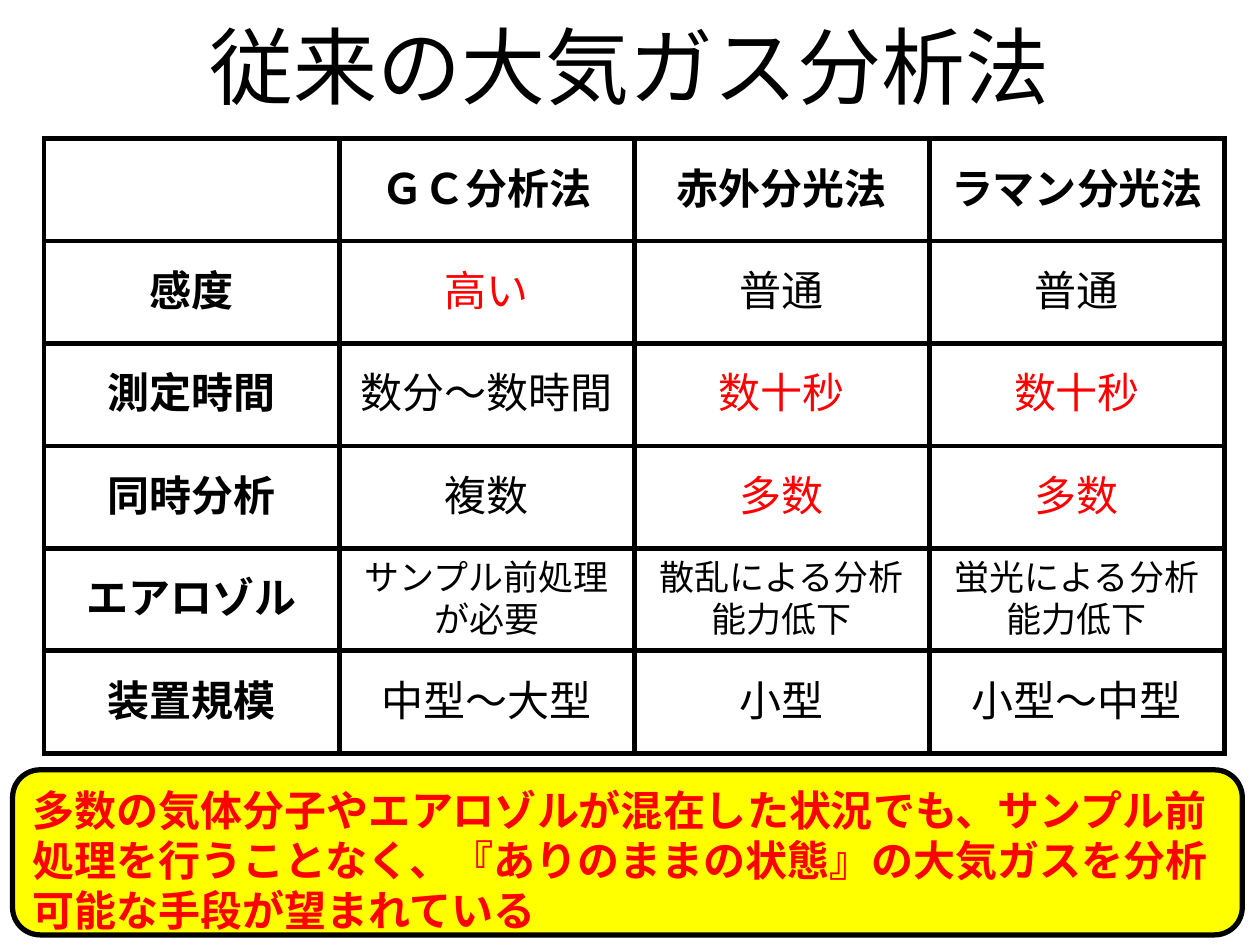
from lxml import etree
from pptx import Presentation
from pptx.dml.color import RGBColor
from pptx.enum.shapes import MSO_SHAPE
from pptx.enum.text import MSO_ANCHOR, PP_ALIGN
from pptx.oxml.ns import qn
from pptx.util import Inches, Pt

ROUND = MSO_SHAPE.ROUNDED_RECTANGLE
TOP, MIDDLE = MSO_ANCHOR.TOP, MSO_ANCHOR.MIDDLE
LEFT, CENTER = PP_ALIGN.LEFT, PP_ALIGN.CENTER
BLACK, WHITE, RED, YELLOW = "000000", "FFFFFF", "FF0000", "FFFF00"

TITLE = "従来の大気ガス分析法"
ROWS = [
    ["", "ＧＣ分析法", "赤外分光法", "ラマン分光法"],
    ["感度", "高い", "普通", "普通"],
    ["測定時間", "数分～数時間", "数十秒", "数十秒"],
    ["同時分析", "複数", "多数", "多数"],
    ["エアロゾル", "サンプル前処理が必要", "散乱による分析能力低下", "蛍光による分析能力低下"],
    ["装置規模", "中型～大型", "小型", "小型～中型"],
]
GOOD = {"高い", "数十秒", "多数"}
NOTE = (
    "多数の気体分子やエアロゾルが混在した状況でも、サンプル前処理を行うことなく、"
    "『ありのままの状態』の大気ガスを分析可能な手段が望まれている"
)


def rgb(code):
    return RGBColor.from_string(code)


def box(left, top, width, height):
    return [Inches(n) for n in (left, top, width, height)]


def write(frame, text, size=24, font="Calibri", color=BLACK, bold=False,
          align=CENTER, anchor=MIDDLE):
    frame.word_wrap = True
    frame.vertical_anchor = anchor
    par = frame.paragraphs[0]
    par.alignment = align
    run = par.add_run()
    run.text = text
    run.font.size = Pt(size)
    run.font.name = font
    run.font.bold = bold
    run.font.color.rgb = rgb(color)
    props = run.font._element
    for tag in ("a:ea", "a:cs"):
        etree.SubElement(props, qn(tag), typeface=font)


def frame_cell(cell):
    props = cell._tc.get_or_add_tcPr()
    for i, side in enumerate(("a:lnL", "a:lnR", "a:lnT", "a:lnB")):
        line = etree.Element(qn(side), w=str(Pt(3)))
        fill = etree.SubElement(line, qn("a:solidFill"))
        etree.SubElement(fill, qn("a:srgbClr"), val=BLACK)
        props.insert(i, line)


def add_grid(slide):
    grid = slide.shapes.add_table(
        len(ROWS), len(ROWS[0]), *box(0.35, 1.1, 9.37, 4.88)).table
    for r, row in enumerate(ROWS):
        for c, text in enumerate(row):
            cell = grid.cell(r, c)
            cell.fill.solid()
            cell.fill.fore_color.rgb = rgb(WHITE)
            frame_cell(cell)
            cell.vertical_anchor = MIDDLE
            if text:
                write(cell.text_frame, text,
                      size=20 if len(text) > 8 else 24,
                      color=RED if text in GOOD else BLACK,
                      bold=r == 0 or c == 0, anchor=None)


def add_note(slide):
    note = slide.shapes.add_shape(ROUND, *box(0.1, 6.11, 9.76, 1.31))
    note.shadow.inherit = False
    note.fill.solid()
    note.fill.fore_color.rgb = rgb(YELLOW)
    note.line.color.rgb = rgb(BLACK)
    note.line.width = Pt(3)
    write(note.text_frame, NOTE, font="Arial", color=RED, bold=True,
          align=LEFT, anchor=TOP)


def main():
    deck = Presentation()
    deck.slide_width, deck.slide_height = Inches(10), Inches(7.5)
    slide = deck.slides.add_slide(deck.slide_layouts[6])
    title = slide.shapes.add_textbox(*box(0.75, -0.11, 8.5, 1.25))
    write(title.text_frame, TITLE, size=48)
    add_note(slide)
    add_grid(slide)
    deck.save("out.pptx")


if __name__ == "__main__":
    main()
